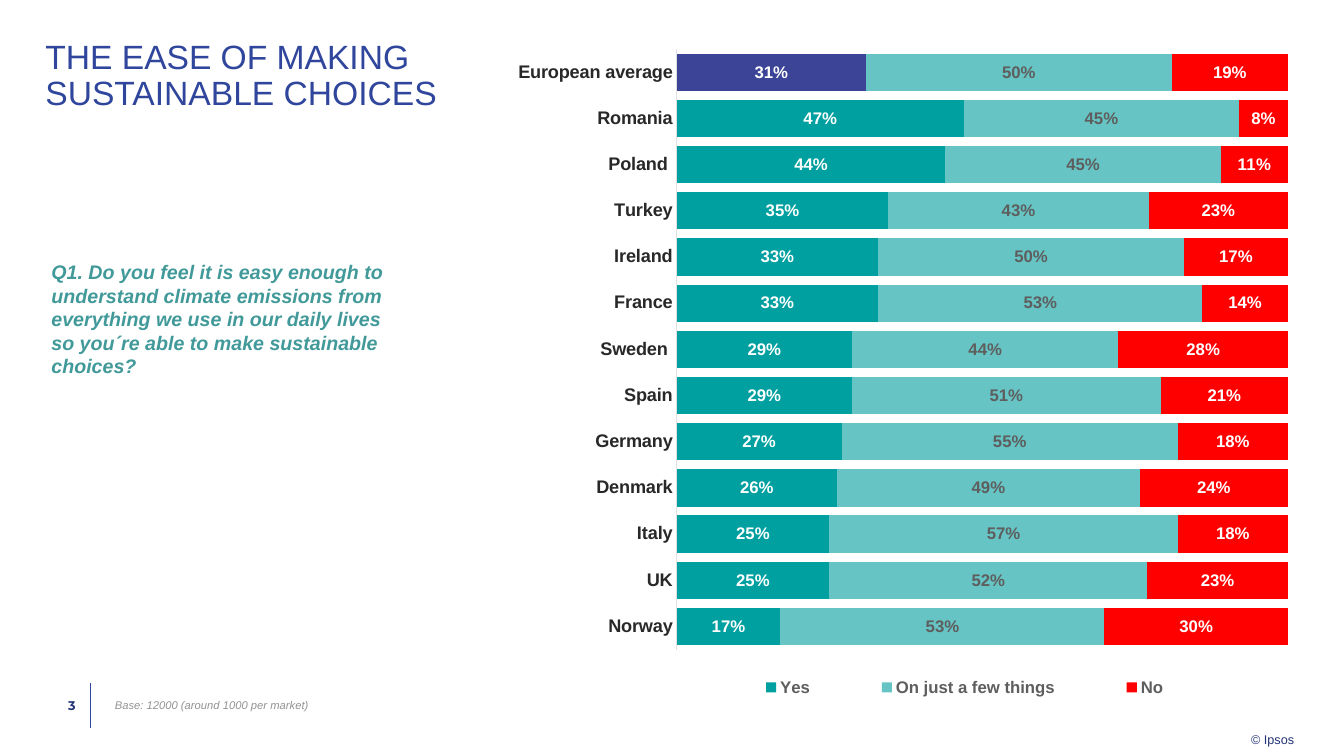
"""Build the slide on how easy people find sustainable choices, by country."""
from lxml import etree
from pptx import Presentation
from pptx import util as u
from pptx.chart.data import CategoryChartData
from pptx.dml.color import RGBColor
from pptx.enum import chart as ch, shapes, text
from pptx.oxml.ns import qn

BLUE = RGBColor(0x2F, 0x46, 0x9C)
NAVY = RGBColor(0x23, 0x34, 0x75)
INDIGO = RGBColor(0x3B, 0x44, 0x96)
TEAL = RGBColor(0x00, 0x9F, 0xA0)
AQUA = RGBColor(0x66, 0xC4, 0xC4)
RED = RGBColor(0xFF, 0x00, 0x00)
QUESTION = RGBColor(0x41, 0x99, 0x99)
DARK = RGBColor(0x28, 0x28, 0x28)
GREY = RGBColor(0x5E, 0x5E, 0x5E)
PALE = RGBColor(0x93, 0x93, 0x93)
AXIS = RGBColor(0xDF, 0xDF, 0xDF)
WHITE = RGBColor(0xFF, 0xFF, 0xFF)

CELL = u.Inches(0.01)
COLS, ROWS = 1333, 750
LEFT, TOP, SPLIT, FOOT = 45, 40, 514, 678


def style(font, color, size, name="Arial", **flags):
    """Set a font's colour, size, name and flags."""
    font.color.rgb = color
    for key, value in dict(size=u.Pt(size), name=name, **flags).items():
        setattr(font, key, value)


def place(parent, index, **shares):
    """Give a chart part a manual layout in shares of the chart."""
    for old in parent.findall(qn("c:layout")):
        parent.remove(old)
    layout = etree.Element(qn("c:layout"))
    manual = etree.SubElement(layout, qn("c:manualLayout"))
    for key, value in shares.items():
        etree.SubElement(manual, qn(f"c:{key}")).set("val", str(value))
    parent.insert(index, layout)


prs = Presentation()
prs.slide_width, prs.slide_height = COLS * CELL, ROWS * CELL
s = prs.slides.add_slide(prs.slide_layouts[5])

title = s.shapes.title
title.left, title.top, title.width, title.height = (
    n * CELL for n in (LEFT, TOP, SPLIT - LEFT, 42))
tf = title.text_frame
for key, value in dict(margin_left=0, margin_top=0, margin_right=0, margin_bottom=0,
                       word_wrap=True, auto_size=text.MSO_AUTO_SIZE.NONE,
                       vertical_anchor=text.MSO_ANCHOR.TOP).items():
    setattr(tf, key, value)
p = tf.paragraphs[0]
p.alignment, p.line_spacing = text.PP_ALIGN.LEFT, 0.9
r = p.add_run()
r.text = "THE EASE OF MAKING SUSTAINABLE CHOICES"
style(r.font, BLUE, 24)

rule = s.shapes.add_connector(shapes.MSO_CONNECTOR.STRAIGHT,
                              *(n * CELL for n in (90, FOOT, 90, 722)))
rule.line.color.rgb, rule.line.width = BLUE, u.Pt(0.5)
etree.SubElement(rule._element.spPr, qn("a:effectLst"))

TOP_ANCHOR, MIDDLE = text.MSO_ANCHOR.TOP, text.MSO_ANCHOR.MIDDLE
ALIGN_L, ALIGN_R = text.PP_ALIGN.LEFT, text.PP_ALIGN.RIGHT
boxes = [
    ("Q1. Do you feel it is easy enough to understand climate emissions from everything "
     "we use in our daily lives so you´re able to make sustainable choices?",
     (51, 258, 331, 118), (0, 0, 0, 0), TOP_ANCHOR, ALIGN_L, True,
     dict(color=QUESTION, size=14, bold=True, italic=True)),
    ("3", (LEFT, FOOT, 45, 43), (0, 0, 15, 0), MIDDLE, ALIGN_R, True,
     dict(color=NAVY, size=9, name="Montserrat", bold=True)),
    ("Base: 12000 (around 1000 per market)",
     (104, FOOT, 278, 43), (10, 5, 10, 5), MIDDLE, ALIGN_L, True,
     dict(color=PALE, size=8, italic=True)),
    ("© Ipsos", (1241, 722, 43, 19), (0, 4, 0, 0), TOP_ANCHOR, ALIGN_L, False,
     dict(color=NAVY, size=9)),
]
for words, spot, margins, anchor, align, wrap, look in boxes:
    tf = s.shapes.add_textbox(*(n * CELL for n in spot)).text_frame
    for side, margin in zip(("left", "top", "right", "bottom"), margins):
        setattr(tf, f"margin_{side}", margin * CELL)
    tf.word_wrap, tf.vertical_anchor = wrap, anchor
    p = tf.paragraphs[0]
    p.alignment = align
    r = p.add_run()
    r.text = words
    style(r.font, **look)

answers = [
    ("Yes", TEAL, WHITE, (31, 47, 44, 35, 33, 33, 29, 29, 27, 26, 25, 25, 17)),
    ("On just a few things", AQUA, GREY,
     (50, 45, 45, 43, 50, 53, 44, 51, 55, 49, 57, 52, 53)),
    ("No", RED, WHITE, (19, 8, 11, 23, 17, 14, 28, 21, 18, 24, 18, 23, 30)),
]
data = CategoryChartData(number_format="0%")
data.categories = ["European average", "Romania", "Poland ", "Turkey", " Ireland", "France",
                   "Sweden ", "Spain", "Germany", "Denmark", "Italy", "UK", "Norway"]
for name, fill, ink, percents in answers:
    data.add_series(name, [n / 100 for n in percents])
chart = s.shapes.add_chart(ch.XL_CHART_TYPE.BAR_STACKED_100,
                           *(n * CELL for n in (SPLIT, TOP, 775, 683)), data).chart
chart.has_title = False
style(chart.font, DARK, 10)

plot = chart.plots[0]
plot.gap_width, plot.overlap, plot.vary_by_categories = 24, 100, False
for series, (name, fill, ink, percents) in zip(plot.series, answers):
    series.format.fill.solid()
    series.format.fill.fore_color.rgb = fill
    labels = series.data_labels
    for key, value in dict(show_value=True, number_format="0%", number_format_is_linked=False,
                           position=ch.XL_LABEL_POSITION.CENTER).items():
        setattr(labels, key, value)
    style(labels.font, ink, 12, bold=True)
average = plot.series[0].points[0].format.fill
average.solid()
average.fore_color.rgb = INDIGO

countries, scale = chart.category_axis, chart.value_axis
countries.reverse_order = True
countries.major_tick_mark = ch.XL_TICK_MARK.NONE
countries.format.line.color.rgb, countries.format.line.width = AXIS, u.Pt(0.75)
style(countries.tick_labels.font, DARK, 13, bold=True)
scale.has_major_gridlines = scale.visible = False
scale.minimum_scale, scale.maximum_scale = 0, 1

chart.has_legend = True
legend = chart.legend
legend.position, legend.include_in_layout = ch.XL_LEGEND_POSITION.BOTTOM, False
style(legend.font, GREY, 12, bold=True)
place(chart.element.find(f".//{qn('c:legend')}"), 1,
      xMode="edge", yMode="edge", x=0.23, y=0.91, w=0.68, h=0.06)
place(chart.element.find(f".//{qn('c:plotArea')}"), 0, layoutTarget="inner",
      xMode="edge", yMode="edge", x=0.2, y=0.013, w=0.785, h=0.872)

prs.save("out.pptx")
